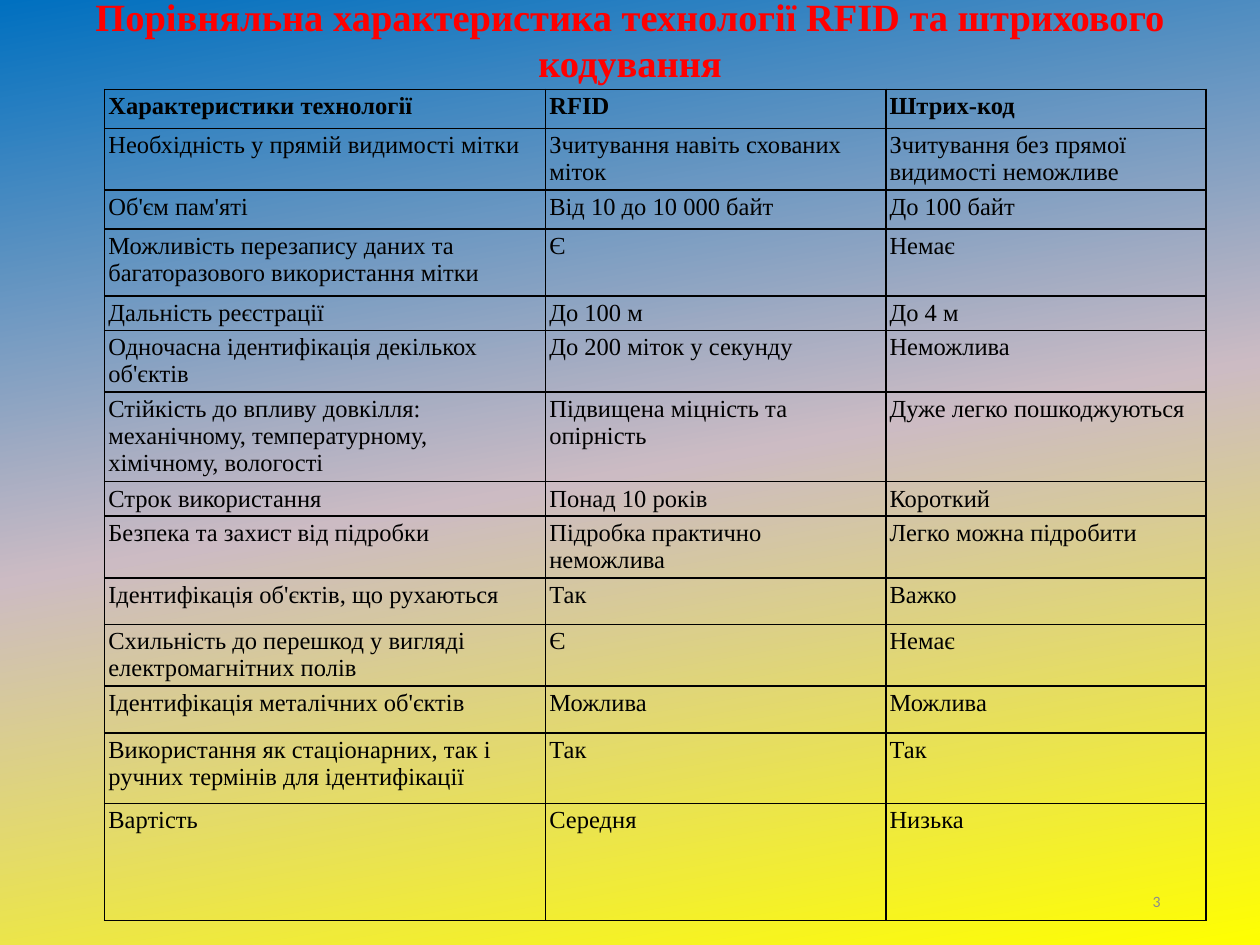
from copy import deepcopy
from dataclasses import dataclass

from lxml.etree import SubElement
from pptx import Presentation
from pptx.dml.color import RGBColor
from pptx.enum.text import MSO_ANCHOR, PP_ALIGN
from pptx.oxml.ns import qn
from pptx.util import Inches, Pt


@dataclass(frozen=True)
class Theme:
    title_font: str = "Times New Roman"
    number_font: str = "Calibri"
    title_size: int = 22
    table_size: int = 14
    table_line_spacing: float = 15.4
    number_size: int = 9
    title_color: str = "FF0000"
    text_color: str = "000000"
    number_color: str = "8C8C8C"
    border_color: str = "000000"
    border_width: int = 1
    cell_margin: float = 0.03
    gradient: tuple = ((0, "FFFF00"), (0.5, "CCBBC3"), (1, "0070C0"))
    gradient_angle: int = 100


THEME = Theme()
COLUMN_WIDTHS = (3.5, 2.7, 2.54)
TABLE_ROWS = (
    (0.31, "Характеристики технології", "RFID", "Штрих-код"),
    (0.49, "Необхідність у прямій видимості мітки", "Зчитування навіть схованих міток",
     "Зчитування без прямої видимості неможливе"),
    (0.31, "Об'єм пам'яті", "Від 10 до 10 000 байт", "До 100 байт"),
    (0.53, "Можливість перезапису даних та багаторазового використання мітки", "Є", "Немає"),
    (0.27, "Дальність реєстрації", "До 100 м", "До 4 м"),
    (0.49, "Одночасна ідентифікація декількох об'єктів", "До 200 міток у секунду", "Неможлива"),
    (0.71, "Стійкість до впливу довкілля: механічному, температурному, хімічному, вологості",
     "Підвищена міцність та опірність", "Дуже легко пошкоджуються"),
    (0.27, "Строк використання", "Понад 10 років", "Короткий"),
    (0.49, "Безпека та захист від підробки", "Підробка практично неможлива", "Легко можна підробити"),
    (0.37, "Ідентифікація об'єктів, що рухаються", "Так", "Важко"),
    (0.49, "Схильність до перешкод у вигляді електромагнітних полів", "Є", "Немає"),
    (0.37, "Ідентифікація металічних об'єктів", "Можлива", "Можлива"),
    (0.56, "Використання як стаціонарних, так і ручних термінів для ідентифікації", "Так", "Так"),
    (0.93, "Вартість", "Середня", "Низька"),
)


def paint_background(slide):
    fill = slide.background.fill
    fill.gradient()
    fill.gradient_angle = THEME.gradient_angle
    first_stop = next(slide.element.iter(qn("a:gs")))
    first_stop.addnext(deepcopy(first_stop))
    for stop, (position, color) in zip(fill.gradient_stops, THEME.gradient):
        stop.position = position
        stop.color.rgb = RGBColor.from_string(color)


def add_run(paragraph, text, font_name, size, color, bold=False):
    run = paragraph.add_run()
    run.text = text
    run.font.name = font_name
    run.font.size = Pt(size)
    run.font.bold = bold
    run.font.color.rgb = RGBColor.from_string(color)


def format_title(slide, text):
    title = slide.shapes.title
    title.left, title.top, title.width, title.height = map(Inches, (0, -0.11, 10, 0.84))
    frame = title.text_frame
    frame.word_wrap = True
    frame.vertical_anchor = MSO_ANCHOR.MIDDLE
    paragraph = frame.paragraphs[0]
    paragraph.alignment = PP_ALIGN.CENTER
    add_run(paragraph, text, THEME.title_font, THEME.title_size, THEME.title_color, True)


def add_slide_number(slide, text):
    box = slide.shapes.add_textbox(*map(Inches, (7.06, 6.95, 2.25, 0.4)))
    frame = box.text_frame
    frame.word_wrap = True
    frame.vertical_anchor = MSO_ANCHOR.MIDDLE
    paragraph = frame.paragraphs[0]
    paragraph.alignment = PP_ALIGN.RIGHT
    add_run(paragraph, text, THEME.number_font, THEME.number_size, THEME.number_color)


def draw_borders(cell):
    properties = cell._tc.get_or_add_tcPr()
    for index, side in enumerate(("lnL", "lnR", "lnT", "lnB")):
        line = properties.makeelement(qn(f"a:{side}"), {"w": str(Pt(THEME.border_width))})
        solid = SubElement(line, qn("a:solidFill"))
        SubElement(solid, qn("a:srgbClr"), val=THEME.border_color)
        properties.insert(index, line)


def fill_cell(cell, text, bold):
    margin = Inches(THEME.cell_margin)
    cell.margin_left = cell.margin_right = cell.margin_top = cell.margin_bottom = margin
    cell.fill.background()
    draw_borders(cell)
    paragraph = cell.text_frame.paragraphs[0]
    paragraph.line_spacing = Pt(THEME.table_line_spacing)
    add_run(paragraph, text, THEME.title_font, THEME.table_size, THEME.text_color, bold)


def add_comparison_table(slide):
    height = sum(row[0] for row in TABLE_ROWS)
    frame = slide.shapes.add_table(
        len(TABLE_ROWS), len(COLUMN_WIDTHS),
        *map(Inches, (0.83, 0.71, sum(COLUMN_WIDTHS), height)))
    table = frame.table
    table.first_row = table.horz_banding = False
    for column, width in zip(table.columns, COLUMN_WIDTHS):
        column.width = Inches(width)
    for index, (row, (row_height, *texts)) in enumerate(zip(table.rows, TABLE_ROWS)):
        row.height = Inches(row_height)
        for cell, text in zip(row.cells, texts):
            fill_cell(cell, text, bold=index == 0)


def main():
    presentation = Presentation()
    presentation.slide_width, presentation.slide_height = Inches(10), Inches(7.5)
    slide = presentation.slides.add_slide(presentation.slide_layouts[5])
    paint_background(slide)
    add_slide_number(slide, "3")
    add_comparison_table(slide)
    format_title(slide, "Порівняльна характеристика технології RFID та штрихового кодування")
    presentation.save("out.pptx")


if __name__ == "__main__":
    main()
